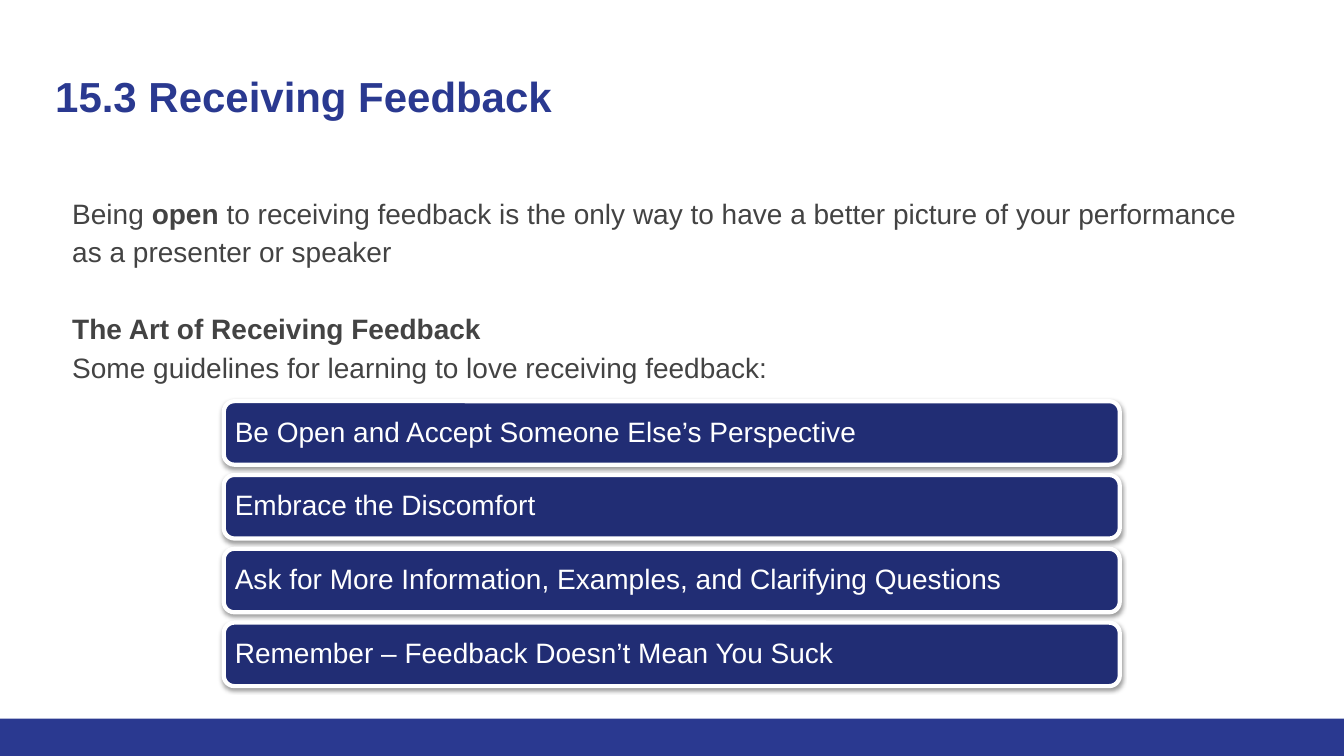
from lxml import etree
from pptx import Presentation
from pptx.dml.color import RGBColor
from pptx.enum.shapes import MSO_SHAPE
from pptx.enum.text import MSO_ANCHOR, MSO_AUTO_SIZE, PP_ALIGN
from pptx.oxml.ns import qn
from pptx.util import Cm, Pt

RECTANGLE, ROUNDED = MSO_SHAPE.RECTANGLE, MSO_SHAPE.ROUNDED_RECTANGLE
TOP, MIDDLE = MSO_ANCHOR.TOP, MSO_ANCHOR.MIDDLE
LEFT = PP_ALIGN.LEFT
NO_AUTOFIT = MSO_AUTO_SIZE.NONE

BLUE = RGBColor(0x2A, 0x39, 0x90)
NAVY = RGBColor(0x21, 0x2D, 0x74)
GREY = RGBColor(0x43, 0x43, 0x43)
WHITE = RGBColor(0xFF, 0xFF, 0xFF)

WIDTH, HEIGHT = 33.87, 19.05
INTRO = [
    (0, [("Being ", False), ("open", True),
         (" to receiving feedback is the only way to have a better picture "
          "of your performance as a presenter or speaker", False)]),
    (27, [("The Art of Receiving Feedback", True)]),
    (0, [("Some guidelines for learning to love receiving feedback:", False)]),
]
GUIDELINES = [
    "Be Open and Accept Someone Else’s Perspective",
    "Embrace the Discomfort",
    "Ask for More Information, Examples, and Clarifying Questions",
    "Remember – Feedback Doesn’t Mean You Suck",
]


def place(sp, left, top, width, height):
    sp.left, sp.top, sp.width, sp.height = Cm(left), Cm(top), Cm(width), Cm(height)


def set_frame(tf, anchor, inset):
    tf.word_wrap = True
    tf.auto_size = NO_AUTOFIT
    tf.vertical_anchor = anchor
    tf.margin_left = tf.margin_right = tf.margin_top = tf.margin_bottom = Cm(inset)


def set_font(font, size, color, bold=False):
    font.name = "Arial"
    font.size = Pt(size)
    font.color.rgb = color
    font.bold = bold


def add_footer_bar(slide, left, top, width, height):
    sp = slide.shapes.add_shape(RECTANGLE, Cm(left), Cm(top), Cm(width), Cm(height))
    sp.shadow.inherit = False
    sp.fill.solid()
    sp.fill.fore_color.rgb = BLUE
    sp.line.fill.background()


def fill_title(slide, left, top, width, height):
    sp = slide.shapes.title
    place(sp, left, top, width, height)
    tf = sp.text_frame
    tf.text = "15.3 Receiving Feedback"
    set_frame(tf, TOP, 0.25)
    p = tf.paragraphs[0]
    p.alignment = LEFT
    set_font(p.runs[0].font, 30, BLUE, True)


def fill_intro(slide, left, top, width, height):
    sp = slide.placeholders[1]
    place(sp, left, top, width, height)
    tf = sp.text_frame
    set_frame(tf, TOP, 0.25)
    for i, (gap, parts) in enumerate(INTRO):
        p = tf.add_paragraph() if i else tf.paragraphs[0]
        pPr = p._p.get_or_add_pPr()
        pPr.set("marL", str(Cm(0.43)))
        pPr.set("indent", "0")
        etree.SubElement(pPr, qn("a:buNone"))
        p.line_spacing = 1.15
        p.space_before = Pt(gap)
        for text, bold in parts:
            r = p.add_run()
            r.text = text
            set_font(r.font, 20, GREY, bold)


def add_card_shadow(sp):
    sp.shadow.inherit = False
    effects = sp._element.spPr.find(qn("a:effectLst"))
    shadow = etree.SubElement(effects, qn("a:outerShdw"), blurRad=str(Pt(3.1)),
                              dist=str(Pt(1.6)), dir="5400000", rotWithShape="0")
    color = etree.SubElement(shadow, qn("a:srgbClr"), val="000000")
    etree.SubElement(color, qn("a:alpha"), val="38000")


def add_guidelines(slide, left, top, width, height):
    card_height = 1.6
    pitch = (height - card_height) / (len(GUIDELINES) - 1)
    for i, text in enumerate(GUIDELINES):
        sp = slide.shapes.add_shape(ROUNDED, Cm(left), Cm(top + i * pitch),
                                    Cm(width), Cm(card_height))
        sp.fill.solid()
        sp.fill.fore_color.rgb = NAVY
        sp.line.color.rgb = WHITE
        sp.line.width = Pt(3)
        add_card_shadow(sp)
        tf = sp.text_frame
        tf.text = text
        set_frame(tf, MIDDLE, 0.2)
        p = tf.paragraphs[0]
        p.alignment = LEFT
        p.line_spacing = 0.9
        set_font(p.runs[0].font, 20, WHITE)


def main():
    prs = Presentation()
    prs.slide_width, prs.slide_height = Cm(WIDTH), Cm(HEIGHT)
    slide = prs.slides.add_slide(prs.slide_layouts[1])
    add_footer_bar(slide, 0, HEIGHT - 0.94, WIDTH, 0.94)
    fill_title(slide, 1.14, 1.52, 31.55, 2.26)
    fill_intro(slide, 1.14, 4.57, 30.84, 5.59)
    add_guidelines(slide, 5.64, 10.11, 22.58, 7.18)
    prs.save("out.pptx")


if __name__ == "__main__":
    main()
